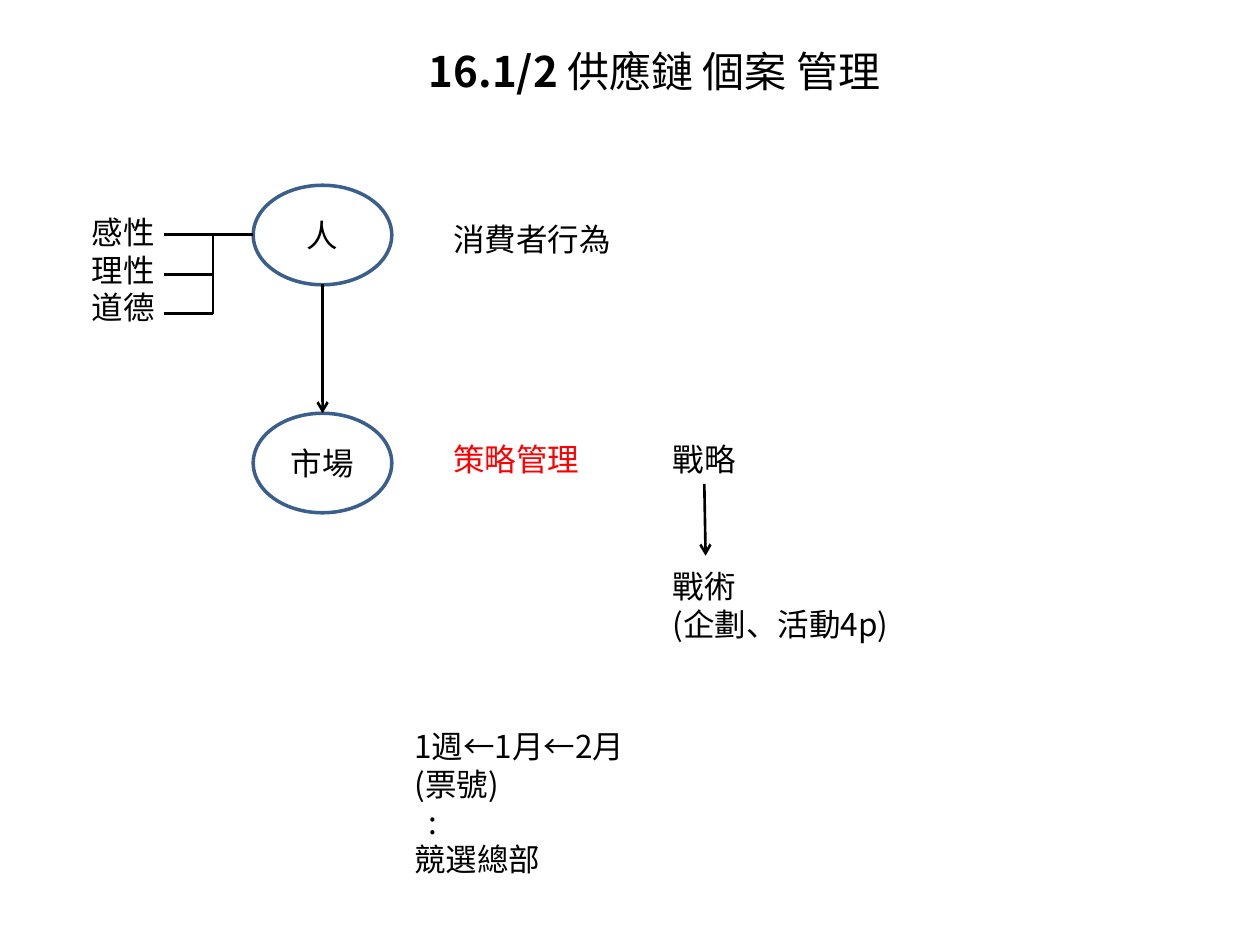
from dataclasses import dataclass

from lxml.etree import SubElement
from pptx import Presentation
from pptx.dml.color import RGBColor
from pptx.enum.shapes import MSO_CONNECTOR as Connector, MSO_SHAPE as Shape
from pptx.enum.text import MSO_ANCHOR as Anchor, MSO_AUTO_SIZE as AutoSize, PP_ALIGN as Align
from pptx.oxml.ns import qn
from pptx.util import Inches, Pt


@dataclass(frozen=True)
class Theme:
    font: str = "Noto Sans CJK SC"
    body_size: float = 18
    title_size: float = 24
    line_width: float = 1.5
    outline_width: float = 2
    ink: RGBColor = RGBColor(0, 0, 0)
    accent: RGBColor = RGBColor(255, 0, 0)
    paper: RGBColor = RGBColor(255, 255, 255)
    outline: RGBColor = RGBColor(0x3A, 0x5F, 0x8C)


class SlideBuilder:
    """Draws styled text, ovals and lines on one slide."""

    def __init__(self, slide, theme):
        self.slide = slide
        self.theme = theme

    def style(self, para, color, size, align):
        para.alignment = align
        font = para.font
        font.name, font.size = self.theme.font, Pt(size)
        font.color.rgb = color
        properties = para._p.get_or_add_pPr().find(qn("a:defRPr"))
        SubElement(properties, qn("a:ea")).set("typeface", self.theme.font)

    def text(self, left, top, width, height, lines, color=None, size=None, align=Align.LEFT):
        box = self.slide.shapes.add_textbox(
            Inches(left), Inches(top), Inches(width), Inches(height))
        frame = box.text_frame
        frame.word_wrap = True
        frame.auto_size = AutoSize.SHAPE_TO_FIT_TEXT
        frame.text = "\n".join(lines)
        for para in frame.paragraphs:
            self.style(para, color or self.theme.ink, size or self.theme.body_size, align)
        return frame.paragraphs

    def title(self, left, top, width, height, number, topic):
        para = self.text(left, top, width, height, [number],
                         size=self.theme.title_size, align=Align.CENTER)[0]
        para.runs[0].font.bold = True
        span = para.add_run()
        span.text = topic
        span.font.bold = False

    def oval(self, left, top, width, height, label):
        oval = self.slide.shapes.add_shape(
            Shape.OVAL, Inches(left), Inches(top), Inches(width), Inches(height))
        oval.shadow.inherit = False
        oval.fill.solid()
        oval.fill.fore_color.rgb = self.theme.paper
        oval.line.color.rgb = self.theme.outline
        oval.line.width = Pt(self.theme.outline_width)
        frame = oval.text_frame
        frame.vertical_anchor = Anchor.MIDDLE
        frame.text = label
        self.style(frame.paragraphs[0], self.theme.ink, self.theme.body_size, Align.CENTER)

    def line(self, start, end, arrow=False):
        line = self.slide.shapes.add_connector(
            Connector.STRAIGHT, *(Inches(value) for value in (*start, *end)))
        line.line.color.rgb = self.theme.ink
        line.line.width = Pt(self.theme.line_width)
        if arrow:
            SubElement(line.line._get_or_add_ln(), qn("a:tailEnd")).set("type", "arrow")
        SubElement(line._element.spPr, qn("a:effectLst"))


def main():
    deck = Presentation()
    deck.slide_width, deck.slide_height = Inches(10), Inches(7.5)
    page = deck.slides.add_slide(deck.slide_layouts[6])
    theme = Theme()
    builder = SlideBuilder(page, theme)

    for top, label in ((1.47, "人"), (3.28, "市場")):
        builder.oval(2.01, top, 1.1, 0.79, label)
    builder.line((2.56, 2.25), (2.56, 3.28), arrow=True)

    stem, branch_end = 1.69, 1.3
    for start, height in ((2.01, 1.86), (stem, 2.18), (stem, 2.49)):
        builder.line((start, height), (branch_end, height))
    builder.line((stem, 1.86), (stem, 2.49))
    builder.text(0.63, 1.64, 0.91, 1.01, ["感性", "理性", "道德"])

    builder.text(3.5, 1.7, 2.13, 0.4, ["消費者行為"])
    builder.text(3.5, 3.44, 2.13, 0.4, ["策略管理"], color=theme.accent)
    builder.text(5.24, 3.44, 0.71, 0.4, ["戰略"])
    builder.line((5.59, 3.84), (5.6, 4.41), arrow=True)
    builder.text(5.24, 4.45, 2.36, 0.71, ["戰術", "(企劃、活動4p)"])

    timeline = builder.text(3.19, 5.72, 2.68, 1.31,
                            ["1週←1月←2月", "(票號)", ":", "競選總部"])
    timeline[2]._p.get_or_add_pPr().set("marL", str(Inches(0.11)))

    builder.title(2.24, 0.31, 5.91, 0.5, "16.1/2 ", "供應鏈 個案 管理")
    deck.save("out.pptx")


if __name__ == "__main__":
    main()
